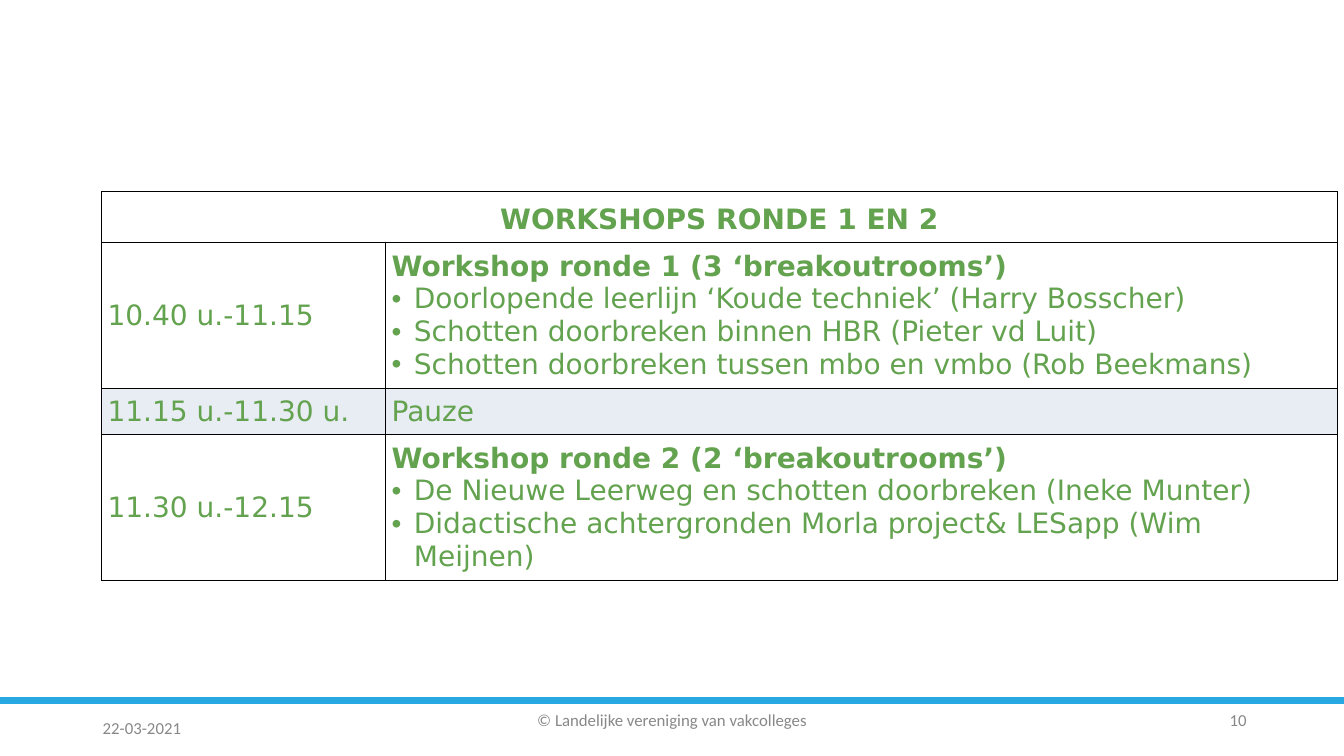
from dataclasses import dataclass

from lxml.etree import SubElement
from pptx import Presentation
from pptx.dml.color import RGBColor
from pptx.enum.shapes import MSO_CONNECTOR
from pptx.enum.text import MSO_ANCHOR, PP_ALIGN
from pptx.oxml.ns import qn
from pptx.util import Cm, Pt


@dataclass(frozen=True)
class Theme:
    green: RGBColor = RGBColor(0x63, 0xA2, 0x4E)
    blue: RGBColor = RGBColor(0x27, 0xA8, 0xE0)
    grey: RGBColor = RGBColor(0x88, 0x88, 0x88)
    white: RGBColor = RGBColor(0xFF, 0xFF, 0xFF)
    pause_fill: RGBColor = RGBColor(0xE8, 0xEC, 0xF3)
    border: RGBColor = RGBColor(0, 0, 0)
    table_font: str = "DejaVu Sans"
    footer_font: str = "Calibri"
    table_size: Pt = Pt(20)
    footer_size: Pt = Pt(12)
    border_width: Pt = Pt(0.5)
    rule_width: Pt = Pt(4.5)


THEME = Theme()
SLIDE_WIDTH, SLIDE_HEIGHT = Cm(33.87), Cm(19.05)
HEADING = "WORKSHOPS RONDE 1 EN 2"
PROGRAMME = [
    ("10.40 u.-11.15", "Workshop ronde 1 (3 ‘breakoutrooms’)", [
        "Doorlopende leerlijn ‘Koude techniek’ (Harry Bosscher)",
        "Schotten doorbreken binnen HBR (Pieter vd Luit)",
        "Schotten doorbreken tussen mbo en vmbo (Rob Beekmans)",
    ]),
    ("11.15 u.-11.30 u.", "Pauze", []),
    ("11.30 u.-12.15", "Workshop ronde 2 (2 ‘breakoutrooms’)", [
        "De Nieuwe Leerweg en schotten doorbreken (Ineke Munter)",
        "Didactische achtergronden Morla project& LESapp (Wim Meijnen)",
    ]),
]
COLUMN_WIDTHS = [Cm(7.16), Cm(23.98)]
HEADING_HEIGHT, WORKSHOP_HEIGHT, PAUSE_HEIGHT = Cm(1.26), Cm(3.68), Cm(1.14)


def set_margins(box, margin):
    box.margin_left = box.margin_right = margin
    box.margin_top = box.margin_bottom = margin


def style_font(font, name, size, color, bold=False):
    font.name = name
    font.size = size
    font.color.rgb = color
    font.bold = bold


def add_bullet(paragraph):
    properties = paragraph._p.get_or_add_pPr()
    properties.set("marL", str(Cm(0.56)))
    properties.set("indent", str(-Cm(0.56)))
    SubElement(properties, qn("a:buFont"), typeface="Arial")
    SubElement(properties, qn("a:buChar"), char="•")


def add_borders(cell):
    properties = cell._tc.get_or_add_tcPr()
    for side in ("lnL", "lnR", "lnT", "lnB"):
        line = SubElement(properties, qn(f"a:{side}"), w=str(THEME.border_width))
        fill = SubElement(line, qn("a:solidFill"))
        SubElement(fill, qn("a:srgbClr"), val=str(THEME.border))


def style_cell(cell, fill):
    set_margins(cell, Cm(0.15))
    cell.vertical_anchor = MSO_ANCHOR.MIDDLE
    add_borders(cell)
    cell.fill.solid()
    cell.fill.fore_color.rgb = fill


def write_cell(cell, lead, bold=False, bullets=()):
    frame = cell.text_frame
    frame.text = "\n".join([lead, *bullets])
    for index, paragraph in enumerate(frame.paragraphs):
        if index:
            add_bullet(paragraph)
        style_font(paragraph.runs[0].font, THEME.table_font, THEME.table_size,
                   THEME.green, bold and index == 0)


def add_programme(slide):
    heights = [HEADING_HEIGHT] + [
        WORKSHOP_HEIGHT if workshops else PAUSE_HEIGHT
        for _, _, workshops in PROGRAMME
    ]
    programme = slide.shapes.add_table(
        len(heights), len(COLUMN_WIDTHS), Cm(2.56), Cm(4.83),
        sum(COLUMN_WIDTHS), sum(heights)).table
    programme.first_row = programme.horz_banding = False
    for column, width in zip(programme.columns, COLUMN_WIDTHS):
        column.width = width
    for row, height in zip(programme.rows, heights):
        row.height = height

    for cell in programme.rows[0].cells:
        style_cell(cell, THEME.white)
    heading = programme.cell(0, 0)
    heading.merge(programme.cell(0, 1))
    write_cell(heading, HEADING, bold=True)
    heading.text_frame.paragraphs[0].alignment = PP_ALIGN.CENTER
    heading.text_frame.paragraphs[0].line_spacing = 1.15

    for row, (time, activity, workshops) in enumerate(PROGRAMME, start=1):
        time_cell, activity_cell = programme.rows[row].cells
        for cell in (time_cell, activity_cell):
            style_cell(cell, THEME.white if workshops else THEME.pause_fill)
        write_cell(time_cell, time)
        write_cell(activity_cell, activity, bool(workshops), workshops)


def add_footer_rule(slide):
    rule = slide.shapes.add_connector(
        MSO_CONNECTOR.STRAIGHT, 0, Cm(17.65), SLIDE_WIDTH, Cm(17.65))
    rule.line.color.rgb = THEME.blue
    rule.line.width = THEME.rule_width
    SubElement(rule._element.spPr, qn("a:effectLst"))


def add_footer_text(slide, text, left, top, width, alignment, wrap=True):
    frame = slide.shapes.add_textbox(left, top, width, Cm(0.74)).text_frame
    frame.word_wrap = wrap
    frame.vertical_anchor = MSO_ANCHOR.MIDDLE
    set_margins(frame, Cm(0.13))
    frame.text = text
    paragraph = frame.paragraphs[0]
    paragraph.alignment = alignment
    style_font(paragraph.runs[0].font, THEME.footer_font, THEME.footer_size, THEME.grey)


def main():
    presentation = Presentation()
    presentation.slide_width = SLIDE_WIDTH
    presentation.slide_height = SLIDE_HEIGHT
    slide = presentation.slides.add_slide(presentation.slide_layouts[6])
    add_footer_rule(slide)
    add_footer_text(slide, "© Landelijke vereniging van vakcolleges",
                    Cm(11.35), Cm(17.78), Cm(11.18), PP_ALIGN.CENTER)
    add_footer_text(slide, "22-03-2021", Cm(2.46), Cm(17.96), Cm(7.37), PP_ALIGN.LEFT)
    add_footer_text(slide, "10", Cm(30.81), Cm(17.78), Cm(0.74), PP_ALIGN.RIGHT, wrap=False)
    add_programme(slide)
    presentation.save("out.pptx")


if __name__ == "__main__":
    main()
